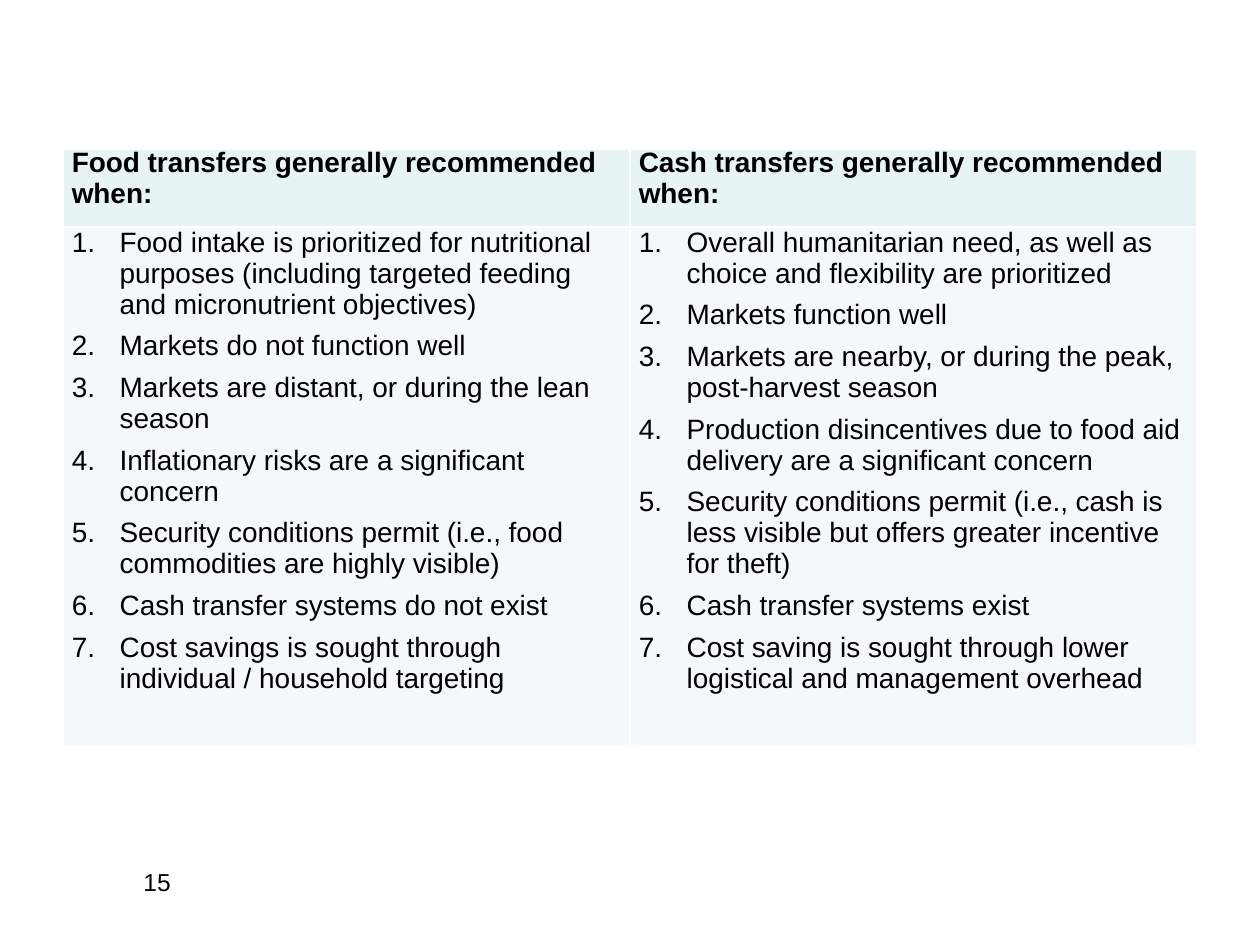
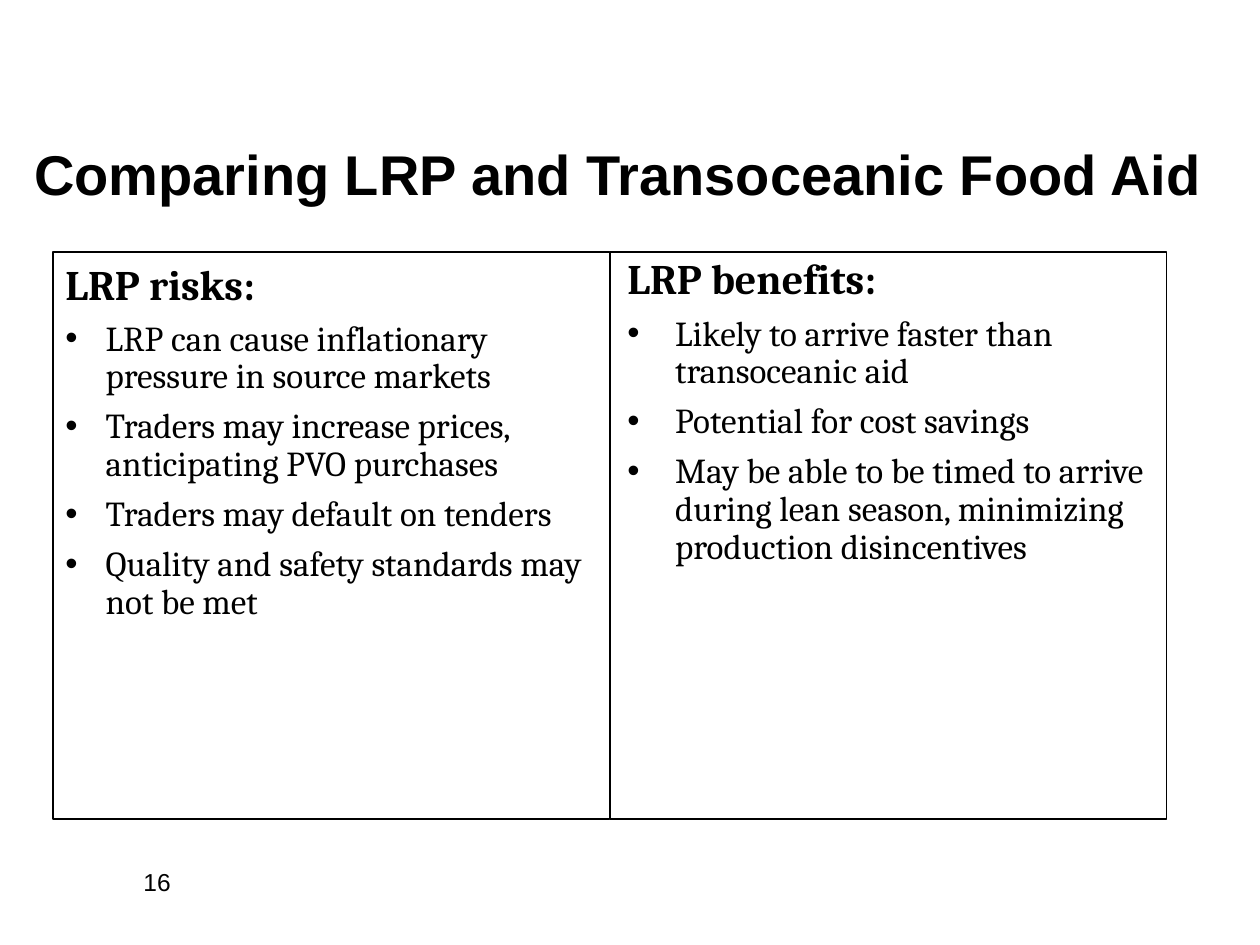
from dataclasses import dataclass

from lxml.etree import SubElement
from pptx import Presentation
from pptx.dml.color import RGBColor
from pptx.enum.shapes import MSO_SHAPE
from pptx.enum.text import MSO_ANCHOR, MSO_AUTO_SIZE, PP_ALIGN
from pptx.oxml import parse_xml
from pptx.oxml.ns import nsdecls, qn
from pptx.util import Inches, Pt

BLACK, WHITE = "000000", "FFFFFF"
HEADER_FILL, BODY_FILL = "E7F3F4", "F3F9FA"
SANS, SERIF = "Arial", "Cambria"
TITLE_ONLY, BLANK = 5, 6


@dataclass
class Column:
    heading: str
    items: list[str]


@dataclass
class Panel:
    column: Column
    left: float
    margin: float
    hanging: float
    heading_spacing: float


TRANSFERS = [
    Column("Food transfers generally recommended when:", [
        "Food intake is prioritized for nutritional purposes "
        "(including targeted feeding and micronutrient objectives)",
        "Markets do not function well",
        "Markets are distant, or during the lean season",
        "Inflationary risks are a significant concern",
        "Security conditions permit (i.e., food commodities are highly visible)",
        "Cash transfer systems do not exist",
        "Cost savings is sought through individual / household targeting",
    ]),
    Column("Cash transfers generally recommended when:", [
        "Overall humanitarian need, as well as choice and flexibility are prioritized",
        "Markets function well",
        "Markets are nearby, or during the peak, post-harvest season",
        "Production disincentives due to food aid delivery are a significant concern",
        "Security conditions permit (i.e., cash is less visible "
        "but offers greater incentive for theft)",
        "Cash transfer systems exist",
        "Cost saving is sought through lower logistical and management overhead",
    ]),
]

PANEL_WIDTH = 4.42
PANELS = [
    Panel(Column("LRP risks:", [
        "LRP can cause inflationary pressure in source markets",
        "Traders may increase prices, anticipating PVO purchases",
        "Traders may default on tenders",
        "Quality and safety standards may not be met",
    ]), 0.42, 0.32, 0.32, 1.0),
    Panel(Column("LRP benefits:", [
        "Likely to arrive faster than transoceanic aid",
        "Potential for cost savings",
        "May be able to be timed to arrive during lean season, "
        "minimizing production disincentives",
    ]), 0.42 + PANEL_WIDTH, 0.42, 0.38, 0.9),
]


def rgb(color: str) -> RGBColor:
    return RGBColor.from_string(color)


def style(p, font: str, size: float, bold: bool = False) -> None:
    p.alignment = PP_ALIGN.LEFT
    for r in p.runs:
        r.font.name, r.font.size, r.font.bold = font, Pt(size), bold
        r.font.color.rgb = rgb(BLACK)


def set_indent(p, margin: float, hanging: float) -> None:
    pPr = p._p.get_or_add_pPr()
    pPr.set("marL", str(Inches(margin)))
    pPr.set("indent", str(-Inches(hanging)))


def add_marker(p, bullet: str = "") -> None:
    """Give the paragraph a bullet, or a number if no bullet is named."""
    pPr = p._p.get_or_add_pPr()
    SubElement(pPr, qn("a:buFont")).set("typeface", SANS)
    if bullet:
        SubElement(pPr, qn("a:buChar")).set("char", bullet)
    else:
        SubElement(pPr, qn("a:buAutoNum")).set("type", "arabicPeriod")


def set_borders(cell, top: float = 1) -> None:
    tcPr = cell._tc.get_or_add_tcPr()
    widths = {"lnL": 1, "lnR": 1, "lnT": top, "lnB": 1}
    for i, (tag, width) in enumerate(widths.items()):
        tcPr.insert(i, parse_xml(
            f'<a:{tag} {nsdecls("a")} w="{Pt(width)}"><a:solidFill>'
            f'<a:srgbClr val="{WHITE}"/></a:solidFill></a:{tag}>'))


def format_cell(cell, fill: str, top: float = 1) -> None:
    cell.margin_left = cell.margin_right = Inches(0.07)
    cell.margin_top = cell.margin_bottom = 0
    cell.fill.solid()
    cell.fill.fore_color.rgb = rgb(fill)
    set_borders(cell, top)


def add_page_number(s, number: int) -> None:
    tf = s.shapes.add_textbox(Inches(1.04), Inches(6.83), Inches(2.08), Inches(0.5)).text_frame
    tf.word_wrap = True
    tf.text = str(number)
    style(tf.paragraphs[0], SANS, 14)


def add_title(s, text: str) -> None:
    sp = s.shapes.title
    sp.left, sp.top, sp.width, sp.height = Inches(0.17), Inches(0.75), Inches(9.67), Inches(1.25)
    tf = sp.text_frame
    tf.text = text
    tf.word_wrap, tf.auto_size = True, MSO_AUTO_SIZE.NONE
    tf.vertical_anchor = MSO_ANCHOR.MIDDLE
    style(tf.paragraphs[0], SANS, 32, bold=True)


def add_transfer_table(s, columns: list[Column]) -> None:
    table = s.shapes.add_table(2, len(columns), Inches(0.5), Inches(1.17),
                               Inches(9), Inches(4.75)).table
    table.first_row = table.horz_banding = False
    table.rows[0].height, table.rows[1].height = Inches(0.63), Inches(4.12)
    for i, column in enumerate(columns):
        header, body = table.cell(0, i), table.cell(1, i)
        format_cell(header, HEADER_FILL, top=3)
        header.text_frame.text = column.heading
        style(header.text_frame.paragraphs[0], SANS, 16, bold=True)

        format_cell(body, BODY_FILL)
        body.text_frame.text = "\n".join(column.items)
        for j, p in enumerate(body.text_frame.paragraphs):
            set_indent(p, 0.38, 0.38)
            add_marker(p)
            p.space_before = Pt(6 if j else 0)
            style(p, SANS, 16)


def add_panel(s, panel: Panel) -> None:
    sp = s.shapes.add_shape(MSO_SHAPE.RECTANGLE, Inches(panel.left), Inches(2),
                            Inches(PANEL_WIDTH), Inches(4.5))
    sp.shadow.inherit = False
    sp.fill.background()
    sp.line.color.rgb = rgb(BLACK)
    sp.line.width = Pt(0.75)
    tf = sp.text_frame
    tf.word_wrap = True
    tf.vertical_anchor = MSO_ANCHOR.TOP
    tf.text = "\n".join([panel.column.heading, *panel.column.items])
    heading, *items = tf.paragraphs
    set_indent(heading, panel.margin, panel.hanging)
    heading.line_spacing = panel.heading_spacing
    heading.space_before = Pt(0)
    style(heading, SERIF, 24, bold=True)
    for p in items:
        set_indent(p, panel.margin, panel.hanging)
        add_marker(p, "•")
        p.line_spacing = 0.9
        p.space_before = Pt(7)
        style(p, SERIF, 20)


def main() -> None:
    prs = Presentation()
    prs.slide_width, prs.slide_height = Inches(10), Inches(7.5)

    # Food and cash transfers
    s = prs.slides.add_slide(prs.slide_layouts[BLANK])
    add_transfer_table(s, TRANSFERS)
    add_page_number(s, 15)

    # Risks and benefits of LRP
    s = prs.slides.add_slide(prs.slide_layouts[TITLE_ONLY])
    add_title(s, "Comparing LRP and Transoceanic Food Aid")
    for panel in PANELS:
        add_panel(s, panel)
    add_page_number(s, 16)

    prs.save("out.pptx")


if __name__ == "__main__":
    main()
